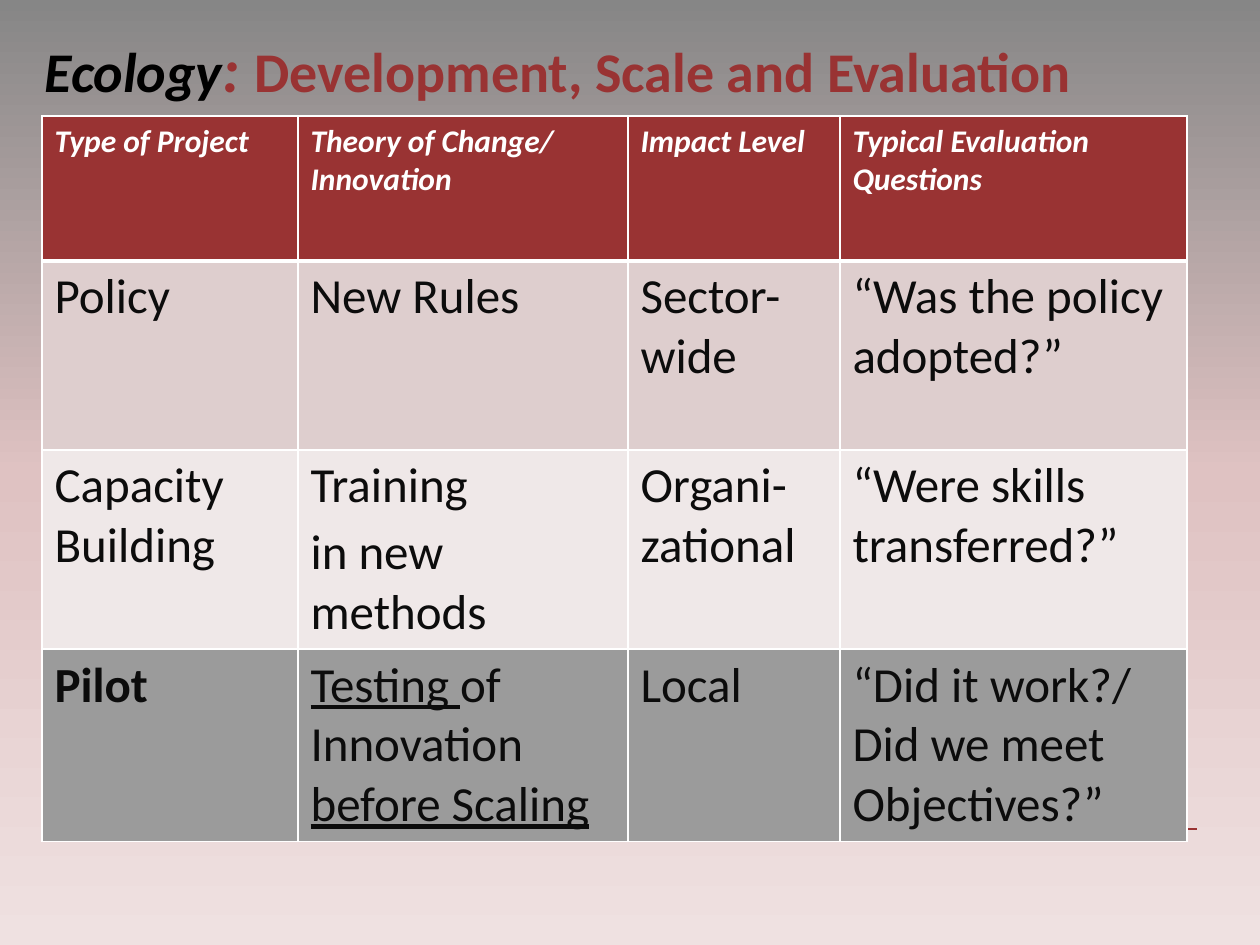
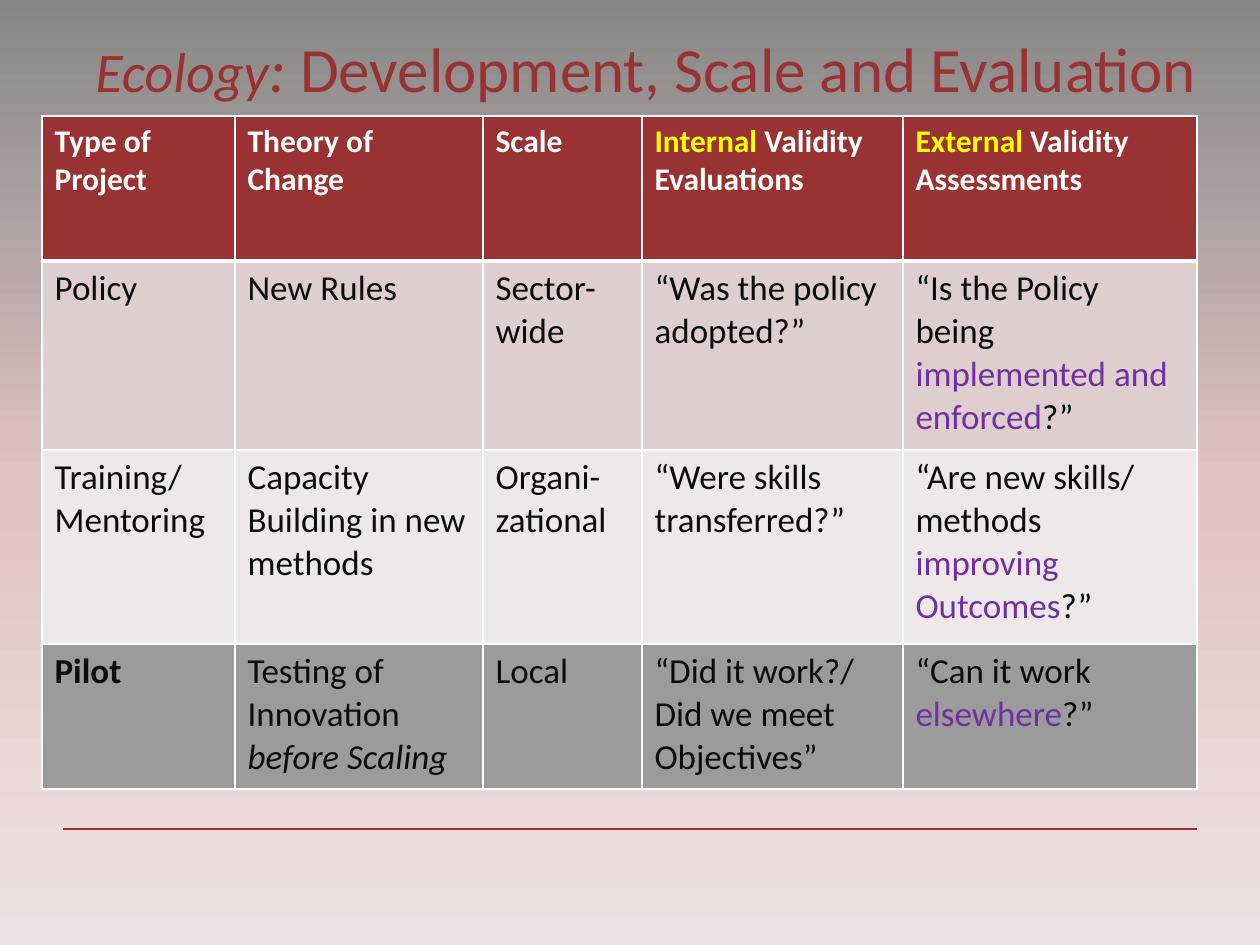
from lxml import etree
from copy import deepcopy
from pptx import Presentation
from pptx.dml.color import RGBColor
from pptx.enum.shapes import MSO_CONNECTOR
from pptx.enum.text import MSO_ANCHOR, MSO_AUTO_SIZE, PP_ALIGN
from pptx.oxml.ns import qn
from pptx.util import Pt

PX = 914400 // 126
STRAIGHT = MSO_CONNECTOR.STRAIGHT
TOP = MSO_ANCHOR.TOP
NO_AUTOFIT = MSO_AUTO_SIZE.NONE
LEFT, CENTER = PP_ALIGN.LEFT, PP_ALIGN.CENTER
TITLE_ONLY = 5

FONT = "Calibri"
COLORS = {
    "accent": "993333", "black": "000000", "white": "FFFFFF", "body": "0C0C0C",
    "yellow": "FFFF00", "purple": "7030A0",
    "policy": "DECECE", "training": "EFE8E8", "pilot": "9B9B9B",
}
BACKGROUND = [(0, "868686"), (0.5, "DFC2C2"), (1, "EFE1E1")]
ROW_FILLS = ["accent", "policy", "training", "pilot"]
ROW_HEIGHTS = [145, 189, 194, 145]
TABLE_LEFT, TABLE_TOP = 42, 116

BOLD = {"bold": True}
ITALIC = {"italic": True}
UNDERLINE = {"underline": True}
YELLOW = {"color": "yellow"}
PURPLE = {"color": "purple"}


def rgb(name):
    return RGBColor.from_string(COLORS[name])


def write_runs(p, runs, base):
    """Write runs, each a string or a (string, style changes) pair."""
    if isinstance(runs, str):
        runs = [runs]
    for run in runs:
        text, changes = (run, {}) if isinstance(run, str) else run
        style = {**base, **changes}
        r = p.add_run()
        r.text = text
        r.font.name = FONT
        r.font.size = Pt(style["size"])
        r.font.color.rgb = rgb(style["color"])
        r.font.bold = style.get("bold", False)
        r.font.italic = style.get("italic", False)
        r.font.underline = style.get("underline", False)


def set_background(master):
    fill = master.background.fill
    fill.gradient()
    fill.gradient_angle = 270
    stops = master.element.find(".//" + qn("p:bg")).find(".//" + qn("a:gsLst"))
    stops.append(deepcopy(stops[-1]))
    for stop, (position, color) in zip(fill.gradient_stops, BACKGROUND):
        stop.position = position
        stop.color.rgb = RGBColor.from_string(color)


def add_footer_rule(slide):
    left, right, y = 63, 1197, 829
    line = slide.shapes.add_connector(STRAIGHT, left * PX, y * PX, right * PX, y * PX)
    line.line.color.rgb = rgb("accent")
    line.line.width = Pt(0.75)
    etree.SubElement(line._element.spPr, qn("a:effectLst"))


def set_title(slide, runs, width, align, base):
    sp = slide.shapes.title
    sp.left, sp.top, sp.width, sp.height = 32 * PX, 21 * PX, width * PX, 80 * PX
    tf = sp.text_frame
    tf.auto_size = NO_AUTOFIT
    tf.word_wrap = True
    tf.vertical_anchor = TOP
    tf.margin_top = 9 * PX
    p = tf.paragraphs[0]
    p.alignment = align
    write_runs(p, runs, base)


def set_borders(cell, top, bottom):
    """Draw white cell borders; top and bottom widths are in points."""
    tcPr = cell._tc.get_or_add_tcPr()
    sides = [("a:lnL", 1), ("a:lnR", 1), ("a:lnT", top), ("a:lnB", bottom)]
    for i, (tag, width) in enumerate(sides):
        ln = etree.Element(qn(tag), w=str(Pt(width)))
        fill = etree.SubElement(ln, qn("a:solidFill"))
        etree.SubElement(fill, qn("a:srgbClr"), val=COLORS["white"])
        tcPr.insert(i, ln)


def fill_cell(cell, content, row, base):
    cell.fill.solid()
    cell.fill.fore_color.rgb = rgb(ROW_FILLS[row])
    set_borders(cell, top=3 if row == 1 else 1, bottom=3 if row == 0 else 1)
    cell.vertical_anchor = TOP
    tf = cell.text_frame
    paragraphs = content.split("\n") if isinstance(content, str) else [content]
    for i, runs in enumerate(paragraphs):
        p = tf.add_paragraph() if i else tf.paragraphs[0]
        if i:
            p.space_before = Pt(4)
        write_runs(p, runs, base)


def add_project_table(slide, widths, rows, header_style, body_size):
    frame = slide.shapes.add_table(
        len(rows), len(widths), TABLE_LEFT * PX, TABLE_TOP * PX,
        sum(widths) * PX, sum(ROW_HEIGHTS) * PX)
    table = frame.table
    table.horz_banding = False
    for column, width in zip(table.columns, widths):
        column.width = width * PX
    header = {"size": 18, "color": "white", "bold": True, **header_style}
    body = {"size": body_size, "color": "body"}
    for i, contents in enumerate(rows):
        table.rows[i].height = ROW_HEIGHTS[i] * PX
        for j, content in enumerate(contents):
            fill_cell(table.cell(i, j), content, i, body if i else header)


def new_slide(prs):
    slide = prs.slides.add_slide(prs.slide_layouts[TITLE_ONLY])
    add_footer_rule(slide)
    return slide


def impact_slide(prs):
    slide = new_slide(prs)
    set_title(slide, [
        ("Ecology", {"color": "black", "italic": True}),
        (": ", {"size": 36, "italic": True}),
        "Development, Scale and Evaluation",
    ], 1187, LEFT, {"size": 32, "color": "accent", "bold": True})
    add_project_table(slide, [256, 330, 212, 347], [
        ["Type of Project", "Theory of Change/ Innovation", "Impact Level",
         "Typical Evaluation Questions"],
        ["Policy", "New Rules", "Sector-wide", "“Was the policy adopted?”"],
        ["Capacity Building", "Training\nin new methods", "Organi-zational",
         "“Were skills transferred?”"],
        [[("Pilot", BOLD)],
         [("Testing ", UNDERLINE), "of Innovation ", ("before Scaling", UNDERLINE)],
         "Local", "“Did it work?/ Did we meet Objectives?”"],
    ], ITALIC, 28)


def validity_slide(prs):
    slide = new_slide(prs)
    set_title(slide, [
        ("Ecology", {"size": 32, "italic": True}),
        (":", ITALIC),
        " Development, Scale and Evaluation",
    ], 1228, CENTER, {"size": 36, "color": "accent"})
    add_project_table(slide, [193, 248, 159, 261, 294], [
        ["Type of Project", "Theory of Change", "Scale",
         [("Internal ", YELLOW), "Validity Evaluations"],
         [("External", YELLOW), " Validity Assessments"]],
        ["Policy", "New Rules", "Sector-wide", "“Was the policy adopted?”",
         ["“Is the Policy being ", ("implemented and enforced", PURPLE), "?”"]],
        ["Training/ Mentoring", "Capacity Building in new methods",
         "Organi-zational", "“Were skills transferred?”",
         ["“Are new skills/ methods ", ("improving Outcomes", PURPLE), "?”"]],
        [[("Pilot", BOLD)],
         ["Testing of Innovation ", ("before Scaling", ITALIC)],
         "Local", "“Did it work?/ Did we meet Objectives”",
         ["“Can it work ", ("elsewhere", PURPLE), "?”"]],
    ], {}, 20)


def main():
    prs = Presentation()
    prs.slide_width, prs.slide_height = 1260 * PX, 945 * PX
    set_background(prs.slide_master)
    impact_slide(prs)
    validity_slide(prs)
    prs.save("out.pptx")


if __name__ == "__main__":
    main()
